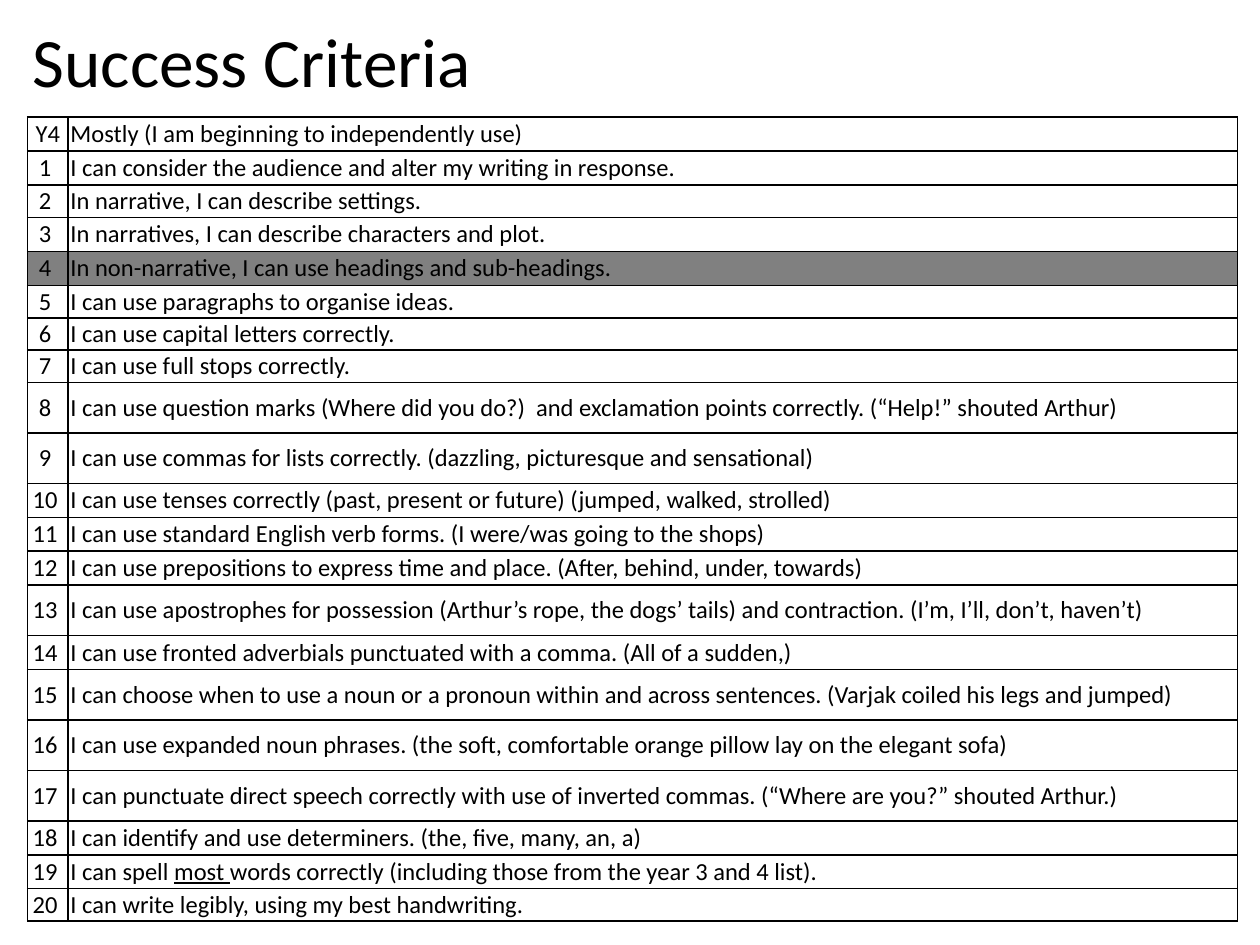
from lxml.etree import SubElement as Sub
from pptx import Presentation
from pptx.dml.color import RGBColor
from pptx.enum.text import MSO_ANCHOR as Anchor, PP_ALIGN as Align
from pptx.oxml.ns import qn
from pptx.util import Inches, Pt

TITLE = "Success Criteria"
HEAD = "Mostly (I am beginning to independently use)"
FONT, BLACK, GREY = "Calibri", "000000", "808080"
SMALL, MID, TALL = 0.25, 0.27, 0.4
SHADED = 4
UNDER = "most "
GOALS = [
    (MID, "I can consider the audience and alter my writing in response."),
    (SMALL, "In narrative, I can describe settings."),
    (MID, "In narratives, I can describe characters and plot."),
    (MID, "In non-narrative, I can use headings and sub-headings."),
    (SMALL, "I can use paragraphs to organise ideas."),
    (SMALL, "I can use capital letters correctly."),
    (SMALL, "I can use full stops correctly."),
    (TALL, "I can use question marks (Where did you do?)  and exclamation points correctly. (“Help!” shouted Arthur)"),
    (TALL, "I can use commas for lists correctly. (dazzling, picturesque and sensational)"),
    (MID, "I can use tenses correctly (past, present or future) (jumped, walked, strolled)"),
    (MID, "I can use standard English verb forms. (I were/was going to the shops)"),
    (MID, "I can use prepositions to express time and place. (After, behind, under, towards)"),
    (TALL, "I can use apostrophes for possession (Arthur’s rope, the dogs’ tails) and contraction. (I’m, I’ll, don’t, haven’t)"),
    (MID, "I can use fronted adverbials punctuated with a comma. (All of a sudden,)"),
    (TALL, "I can choose when to use a noun or a pronoun within and across sentences. (Varjak coiled his legs and jumped)"),
    (TALL, "I can use expanded noun phrases. (the soft, comfortable orange pillow lay on the elegant sofa)"),
    (TALL, "I can punctuate direct speech correctly with use of inverted commas. (“Where are you?” shouted Arthur.)"),
    (MID, "I can identify and use determiners. (the, five, many, an, a)"),
    (MID, "I can spell most words correctly (including those from the year 3 and 4 list)."),
    (SMALL, "I can write legibly, using my best handwriting."),
]
ROWS = [(MID, "Y4", HEAD)] + [(high, f"{n} ", goal) for n, (high, goal) in enumerate(GOALS, 1)]
COLS = [0.32, 9.28]


def color(code):
    return RGBColor.from_string(code)


def style(par, size, align):
    par.alignment = align
    par.font.name, par.font.size = FONT, Pt(size)
    par.font.color.rgb = color(BLACK)


def border(cell):
    props = cell._tc.get_or_add_tcPr()
    for spot, side in enumerate(("lnL", "lnR", "lnT", "lnB")):
        line = props.makeelement(qn(f"a:{side}"), {"w": str(Pt(1))})
        fill = Sub(line, qn("a:solidFill"))
        Sub(fill, qn("a:srgbClr"), val=BLACK)
        props.insert(spot, line)


def write(cell, text, align, shaded):
    cell.margin_left = cell.margin_right = Inches(0.02)
    cell.margin_top = cell.margin_bottom = Inches(0.01)
    cell.vertical_anchor = Anchor.MIDDLE
    par = cell.text_frame.paragraphs[0]
    start, mark, rest = text.partition(UNDER)
    for part in filter(None, (start, mark, rest)):
        run = par.add_run()
        run.text = part
        if part == UNDER:
            run.font.underline = True
    style(par, 14, align)
    if shaded:
        cell.fill.solid()
        cell.fill.fore_color.rgb = color(GREY)
    else:
        cell.fill.background()
    border(cell)


def main():
    """Build the success criteria slide."""
    deck = Presentation()
    deck.slide_width, deck.slide_height = Inches(10), Inches(7.5)
    slide = deck.slides.add_slide(deck.slide_layouts[5])

    title = slide.shapes.title
    title.left, title.top = Inches(0.16), Inches(0.19)
    title.width, title.height = Inches(8.62), Inches(0.65)
    title.text_frame.text = TITLE
    title.text_frame.vertical_anchor = Anchor.MIDDLE
    par = title.text_frame.paragraphs[0]
    par.line_spacing = 0.9
    style(par, 39.6, Align.LEFT)

    high = sum(row[0] for row in ROWS)
    table = slide.shapes.add_table(len(ROWS), len(COLS), Inches(0.22), Inches(0.93),
                                   Inches(sum(COLS)), Inches(high)).table
    table.first_row = table.horz_banding = False
    for col, wide in zip(table.columns, COLS):
        col.width = Inches(wide)
    for i, (high, label, goal) in enumerate(ROWS):
        table.rows[i].height = Inches(high)
        write(table.cell(i, 0), label, Align.CENTER, i == SHADED)
        write(table.cell(i, 1), goal, Align.LEFT, i == SHADED)

    deck.save("out.pptx")


if __name__ == "__main__":
    main()
